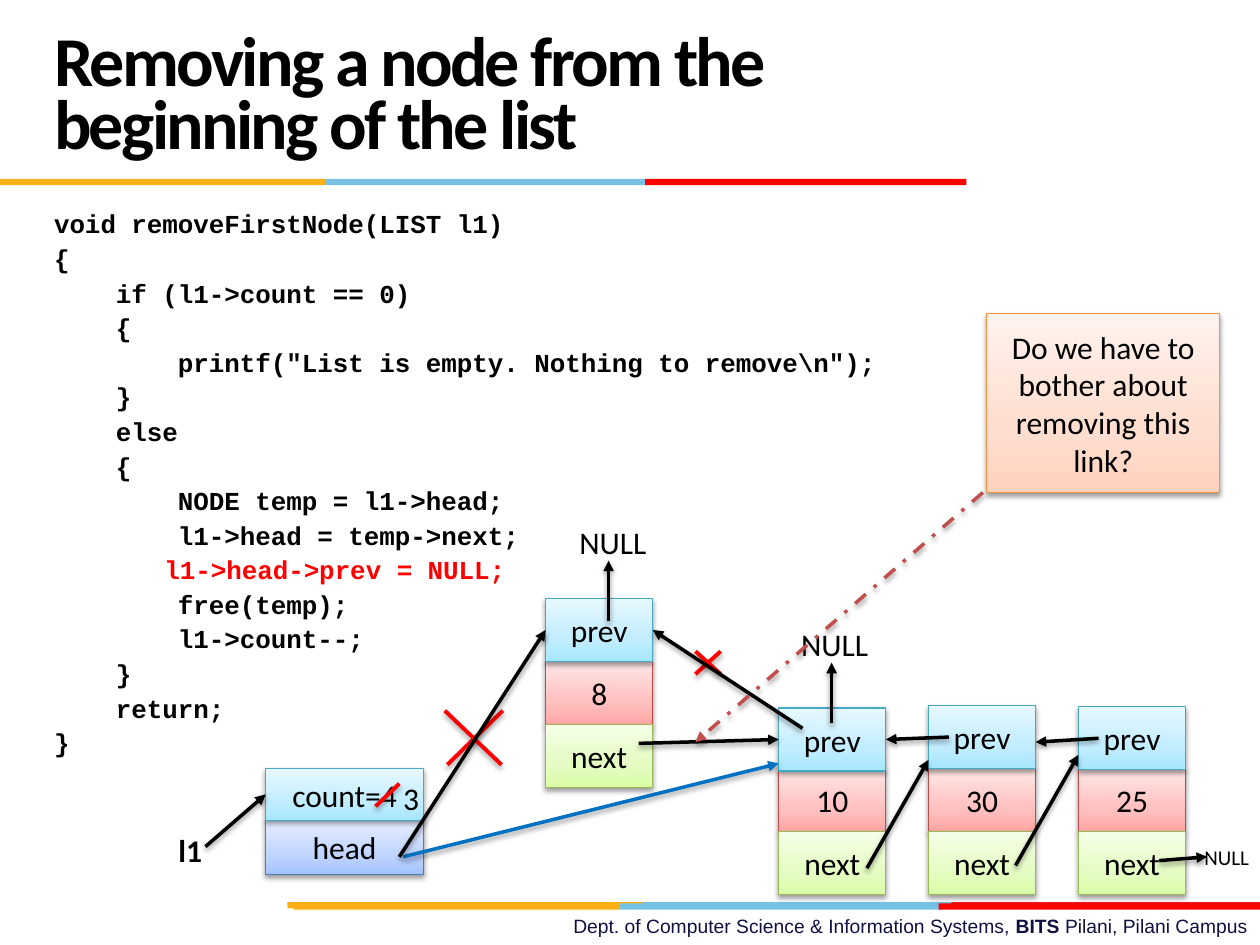
import pptx
import pptx.dml.color
import pptx.enum.dml
import pptx.enum.shapes
import pptx.enum.text
import pptx.oxml
import pptx.oxml.ns
import pptx.util

Pt = pptx.util.Pt
ALIGN = pptx.enum.text.PP_ALIGN
ANCHOR = pptx.enum.text.MSO_ANCHOR
DASH_DOT = pptx.enum.dml.MSO_LINE.DASH_DOT
RECTANGLE = pptx.enum.shapes.MSO_SHAPE.RECTANGLE
STRAIGHT = pptx.enum.shapes.MSO_CONNECTOR.STRAIGHT
LEFT, RIGHT = 1, 3

THEME = {
    "black": "000000", "red": "FF0000", "blue": "0070C0", "brick": "C0504D",
    "gold": "FCB017", "sky": "76C2E5", "crimson": "E31C24", "navy": "101141",
    "title": 40, "code": 14.8, "label": 18, "small": 12, "footer": 11,
    "sans": "Calibri", "mono": "Courier New", "foot_font": "Arial",
    "fills": {
        "prev": (("A7E6FF", "C1EDFF", "E7F8FF"), "46AAC5"),
        "value": (("FFA6A5", "FFC0BF", "FFE7E7"), "BF4C48"),
        "next": (("DAFDA7", "E4FCC2", "F5FFE7"), "98B955"),
        "head": (("A4C4FF", "BFD4FF", "E6EEFF"), "4B7EBC"),
        "callout": (("FFD2BD", "FFDED0", "FFF2ED"), "F69240"),
    },
}

BARS = [
    (364.3, 515.5, 183.6, "sky"), (543.6, 515.5, 176.4, "crimson"), (164.2, 515.5, 203, "gold"),
    (354.2, 516.2, 183.6, "sky"), (167.8, 516.2, 186.4, "gold"), (536.4, 516.2, 183.6, "red"),
    (185.8, 102.2, 183.6, "sky"), (0, 102.2, 185.8, "gold"), (368.6, 102.2, 183.6, "red"),
]
TITLE = "Removing a node from the beginning of the list"
FOOTER = [("Dept. of Computer Science & Information Systems, ", {}), ("BITS ", {"bold": True}),
          ("Pilani, Pilani Campus", {})]
CODE = [
    "void removeFirstNode(LIST l1)",
    "{",
    "    if (l1->count == 0)",
    "    {",
    '        printf("List is empty. Nothing to remove\\n");',
    "    }",
    "    else",
    "    {",
    "        NODE temp = l1->head;",
    "        l1->head = temp->next;",
    [("\t\t", {}), ("l1->head->prev = NULL;", {"color": "red"})],
    "        free(temp);",
    "        l1->count--;",
    "    }",
    "    return;",
    "}",
]
NODE_WIDTH, CELL_HEIGHT = 61.2, 36
NODES = [
    ("8", 311.8, 342, 378),
    ("10", 445, 404.6, 439.2),
    ("30", 530.6, 403.2, 439.2),
    ("25", 616.3, 403.9, 439.2),
]
LIST_CELLS = [
    ("head", "head", (151.9, 468.7, 90, 31)),
    ("count=4", "prev", (151.9, 439.2, 90, 29.5)),
]
LABELS = [
    ("NULL", (681.1, 478.8, 42.5, 21.6), {"size": "small"}),
    ("NULL", (324, 295.2, 55.4, 28.8), {}),
    ("NULL", (450.7, 353.5, 55.4, 28.8), {}),
    ("3", (223.2, 441.4, 23, 28.8), {"align": ALIGN.CENTER}),
    ("l1", (61.2, 471.6, 95, 28.8), {"align": ALIGN.CENTER, "bold": True}),
]
CALLOUT = ("Do we have to bother about removing this link?", (563.8, 179.3, 133.2, 102.2))
ARROWS = [
    ((662.4, 491.8), (689.8, 489.6), {}),
    ((580.3, 494.6), (616.3, 431.3), {}),
    ((495.4, 496.1), (530.6, 434.2), {}),
    ((365, 424.8), (445, 422.6), {"target": ("10", LEFT)}),
    ((230.4, 489.6), (445, 436.3), {"color": "blue"}),
    ((117.4, 483.8), (151.9, 453.9), {"target": ("count=4", LEFT)}),
    ((347.8, 355), (347.8, 320.4), {}),
    ((542.2, 421.2), (506.2, 422.6), {"target": ("10", RIGHT)}),
    ((627.8, 421.9), (591.8, 424.1), {}),
    ((458.6, 416.2), (373, 360), {"target": ("8", RIGHT)}),
    ((228.2, 489.6), (311.8, 360), {"target": ("8", LEFT)}),
    ((475.2, 413.3), (475.2, 378.7), {}),
    ((561.6, 281.5), (397.4, 424.1), {"color": "brick", "dash": DASH_DOT}),
]
STRIKES = [
    ((228.2, 447.8), (214.6, 460.8)),
    ((287.3, 406.1), (255.6, 437)),
    ((286.6, 437), (254.2, 406.1)),
    ((411.8, 372.2), (397.4, 385.2)),
    ((411.8, 385.2), (397.4, 372.2)),
]


def rgb(name):
    return pptx.dml.color.RGBColor.from_string(THEME.get(name, name))


def xml(tag, attributes="", inner=""):
    return f"<a:{tag} {attributes}>{inner}</a:{tag}>"


def element(tag, attributes="", inner=""):
    namespace = pptx.oxml.ns.nsdecls("a")
    return pptx.oxml.parse_xml(xml(tag, f"{namespace} {attributes}", inner))


def add_shadow(shape, distance=1.6, opacity=38):
    color = xml("srgbClr", 'val="000000"', xml("alpha", f'val="{opacity * 1000}"'))
    outer = xml("outerShdw", f'blurRad="{Pt(3.1)}" dist="{Pt(distance)}" dir="5400000" rotWithShape="0"', color)
    shape.element.spPr.append(element("effectLst", inner=outer))


def write(shape, paragraphs, size="label", font="sans", color="black", bold=False, align=ALIGN.LEFT,
          anchor=ANCHOR.TOP, line=None, before=0, hanging=0, tracking=None):
    frame = shape.text_frame
    frame.word_wrap = True
    frame.vertical_anchor = anchor
    for index, content in enumerate(paragraphs):
        para = frame.add_paragraph() if index else frame.paragraphs[0]
        para.alignment = align
        if line:
            para.line_spacing = line
        if index:
            para.space_before = Pt(before)
        if hanging:
            properties = para._p.get_or_add_pPr()
            properties.set("marL", str(Pt(hanging)))
            properties.set("indent", str(-Pt(hanging)))
        for text, changes in [(content, {})] if isinstance(content, str) else content:
            span = para.add_run()
            span.text = text
            span.font.size = Pt(THEME[size])
            span.font.name = THEME[font]
            span.font.bold = changes.get("bold", bold)
            span.font.color.rgb = rgb(changes.get("color", color))
            if tracking:
                span.font._element.set("spc", str(round(tracking * 100)))


def add_text(page, bounds, paragraphs, **style):
    write(page.shapes.add_textbox(*map(Pt, bounds)), paragraphs, **style)


def add_bar(page, left, top, width, color):
    bar = page.shapes.add_shape(RECTANGLE, Pt(left), Pt(top), Pt(width), Pt(3.6))
    bar.shadow.inherit = False
    bar.fill.solid()
    bar.fill.fore_color.rgb = rgb(color)
    bar.line.fill.background()


def add_cell(page, text, kind, bounds):
    box = page.shapes.add_shape(RECTANGLE, *map(Pt, bounds))
    colors, outline = THEME["fills"][kind]
    stops = "".join(xml("gs", f'pos="{position}"', xml("srgbClr", f'val="{color}"'))
                    for position, color in zip((0, 35000, 100000), colors))
    box.element.spPr.insert(2, element("gradFill", 'rotWithShape="1"',
                                       xml("gsLst", "", stops) + xml("lin", 'ang="16200000" scaled="0"')))
    box.line.color.rgb = rgb(outline)
    box.line.width = Pt(0.75)
    add_shadow(box)
    write(box, [text], align=ALIGN.CENTER, anchor=ANCHOR.MIDDLE)
    return box


def add_line(page, start, end, color="black", width=2, dash=None, arrow=True, target=None):
    line = page.shapes.add_connector(STRAIGHT, *map(Pt, start + end))
    if target:
        line.end_connect(*target)
    line.line.color.rgb = rgb(color)
    line.line.width = Pt(width)
    if dash:
        line.line.dash_style = dash
    if arrow:
        line.line._get_or_add_ln().append(element("tailEnd", 'type="triangle"'))
        add_shadow(line)
    else:
        add_shadow(line, distance=1.8, opacity=35)


def main():
    deck = pptx.Presentation()
    deck.slide_width, deck.slide_height = Pt(720), Pt(540)
    page = deck.slides.add_slide(deck.slide_layouts[6])
    for bar in BARS:
        add_bar(page, *bar)
    add_text(page, (0, 519.1, 720, 20.9), [FOOTER], size="footer", font="foot_font", color="navy",
             align=ALIGN.RIGHT)
    add_text(page, (23.8, 117.4, 648, 326.9), CODE, size="code", font="mono", bold=True,
             line=0.9, before=3.8, hanging=27)
    add_text(page, (23.8, 12.2, 498.2, 90), [TITLE], size="title", bold=True, anchor=ANCHOR.MIDDLE,
             line=Pt(36), tracking=-1.5)

    boxes = {}
    for text, kind, bounds in LIST_CELLS:
        boxes[text] = add_cell(page, text, kind, bounds)
    for value, left, prev_top, value_top in NODES:
        cells = [(value, "value", value_top), ("next", "next", value_top + CELL_HEIGHT),
                 ("prev", "prev", prev_top)]
        for text, kind, top in cells:
            boxes[value] = add_cell(page, text, kind, (left, top, NODE_WIDTH, CELL_HEIGHT))
    for text, bounds, style in LABELS:
        add_text(page, bounds, [text], **style)
    add_cell(page, CALLOUT[0], "callout", CALLOUT[1])
    for start, end in STRIKES:
        add_line(page, start, end, color="red", width=2.25, arrow=False)
    for start, end, style in ARROWS:
        if "target" in style:
            name, side = style["target"]
            style = {**style, "target": (boxes[name], side)}
        add_line(page, start, end, **style)
    deck.save("out.pptx")


if __name__ == "__main__":
    main()
